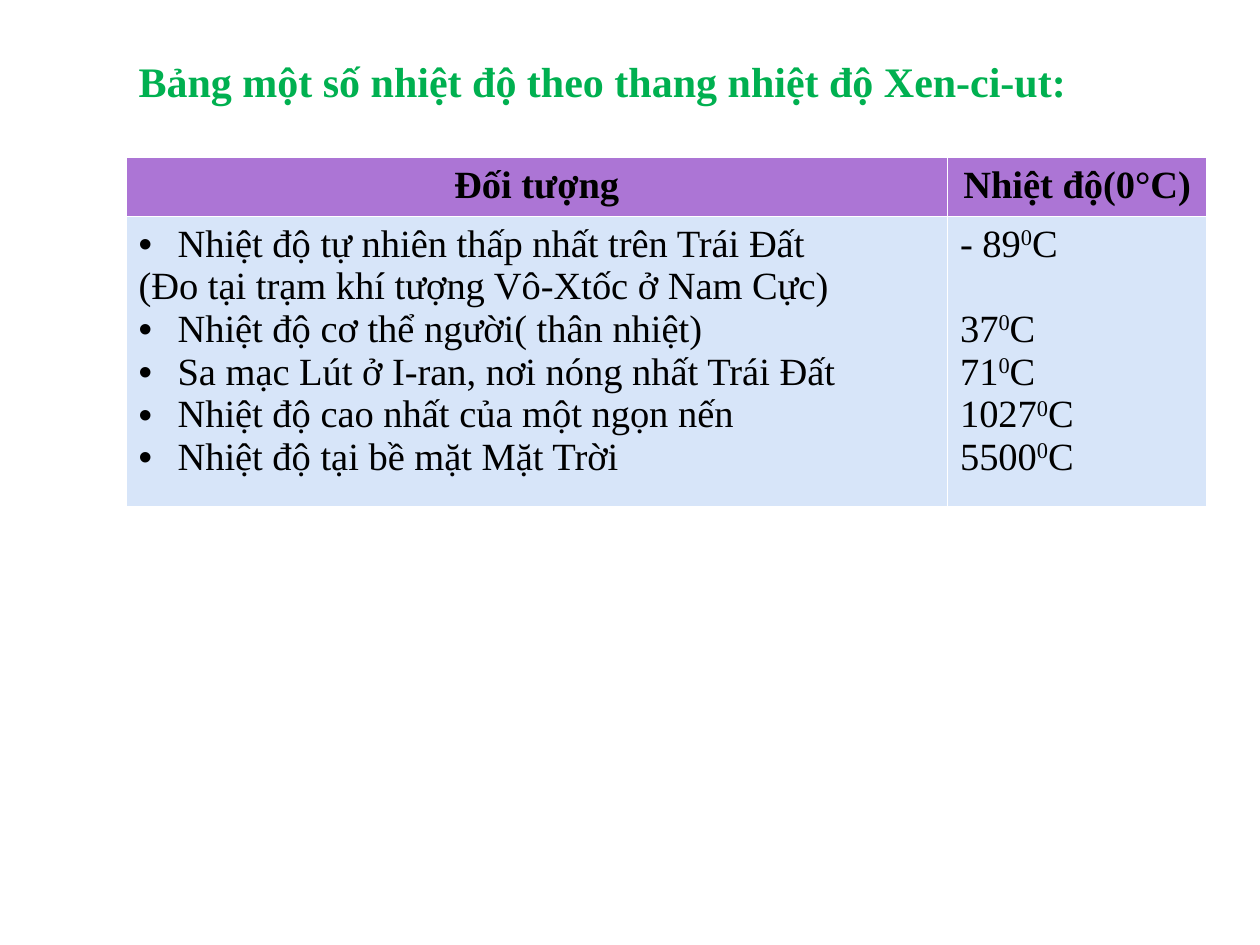
import pptx
import pptx.dml.color
import pptx.enum.text
import pptx.oxml.ns
import pptx.util
from lxml import etree

Inches = pptx.util.Inches
Pt = pptx.util.Pt
ALIGN = pptx.enum.text.PP_ALIGN


def color(value):
    return pptx.dml.color.RGBColor.from_string(value)


class Deck:
    font = "Times New Roman"
    text = "000000"
    green = "00B050"
    header = "AC75D5"
    body = "D7E5F9"
    size = 22

    def __init__(self, prs):
        self.slide = prs.slides.add_slide(prs.slide_layouts[5])

    def run(self, p, text, size=None, bold=False, fill=None, raised=False):
        r = p.add_run()
        r.text = text
        r.font.name = self.font
        r.font.size = Pt(size or self.size)
        r.font.bold = bold
        r.font.color.rgb = color(fill or self.text)
        if raised:
            r._r.get_or_add_rPr().set("baseline", "30000")

    def bullet(self, p):
        pPr = p._p.get_or_add_pPr()
        pPr.set("marL", str(Inches(0.31)))
        pPr.set("indent", str(-Inches(0.31)))
        for tag, name, value in (("a:buFont", "typeface", "Arial"),
                                 ("a:buChar", "char", "•")):
            etree.SubElement(pPr, pptx.oxml.ns.qn(tag)).set(name, value)

    def title(self, text, left, top, width, height):
        sp = self.slide.shapes.title
        sp.left, sp.top = Inches(left), Inches(top)
        sp.width, sp.height = Inches(width), Inches(height)
        tf = sp.text_frame
        tf.word_wrap = True
        tf.auto_size = pptx.enum.text.MSO_AUTO_SIZE.SHAPE_TO_FIT_TEXT
        tf.vertical_anchor = pptx.enum.text.MSO_ANCHOR.TOP
        p = tf.paragraphs[0]
        p.alignment = ALIGN.JUSTIFY
        self.run(p, text, 24, True, self.green)

    def table(self, left, top, widths, heights):
        frame = self.slide.shapes.add_table(
            len(heights), len(widths), Inches(left), Inches(top),
            Inches(sum(widths)), Inches(sum(heights)))
        table = frame.table
        table.horz_banding = False
        for column, width in zip(table.columns, widths):
            column.width = Inches(width)
        for row, height, fill in zip(table.rows, heights, (self.header, self.body)):
            row.height = Inches(height)
            for cell in row.cells:
                cell.fill.solid()
                cell.fill.fore_color.rgb = color(fill)
        return table

    def paragraphs(self, cell, count):
        tf = cell.text_frame
        return [tf.paragraphs[0]] + [tf.add_paragraph() for _ in range(count - 1)]


HEADERS = ["Đối tượng", "Nhiệt độ(0°C)"]
# Object, note under it, temperature
ROWS = [
    ("Nhiệt độ tự nhiên thấp nhất trên Trái Đất",
     "(Đo tại trạm khí tượng Vô-Xtốc ở Nam Cực)", "- 89"),
    ("Nhiệt độ cơ thể người( thân nhiệt)", None, "37"),
    ("Sa mạc Lút ở I-ran, nơi nóng nhất Trái Đất", None, "71"),
    ("Nhiệt độ cao nhất của một ngọn nến", None, "1027"),
    ("Nhiệt độ tại bề mặt Mặt Trời", None, "5500"),
]


def main():
    prs = pptx.Presentation()
    prs.slide_width, prs.slide_height = Inches(10), Inches(7.5)
    deck = Deck(prs)

    # Title
    deck.title("Bảng một số nhiệt độ theo thang nhiệt độ Xen-ci-ut:",
               1, 0.39, 8.17, 0.5)

    # Table header
    table = deck.table(1, 1.25, [6.52, 2.06], [0.47, 2.29])
    for cell, text in zip(table.rows[0].cells, HEADERS):
        p = cell.text_frame.paragraphs[0]
        p.alignment = ALIGN.CENTER
        deck.run(p, text, bold=True)

    # Objects, with their notes
    lines = [(text, i == 0) for row in ROWS
             for i, text in enumerate(row[:2]) if text]
    for p, (text, bulleted) in zip(deck.paragraphs(table.cell(1, 0), len(lines)), lines):
        if bulleted:
            deck.bullet(p)
        deck.run(p, text)

    # Temperatures, one line lower after a note
    after_note = False
    for p, (_, note, value) in zip(deck.paragraphs(table.cell(1, 1), len(ROWS)), ROWS):
        if after_note:
            p.space_before = Pt(24.4)
        deck.run(p, value)
        deck.run(p, "0", raised=True)
        deck.run(p, "C")
        after_note = bool(note)

    prs.save("out.pptx")


if __name__ == "__main__":
    main()
